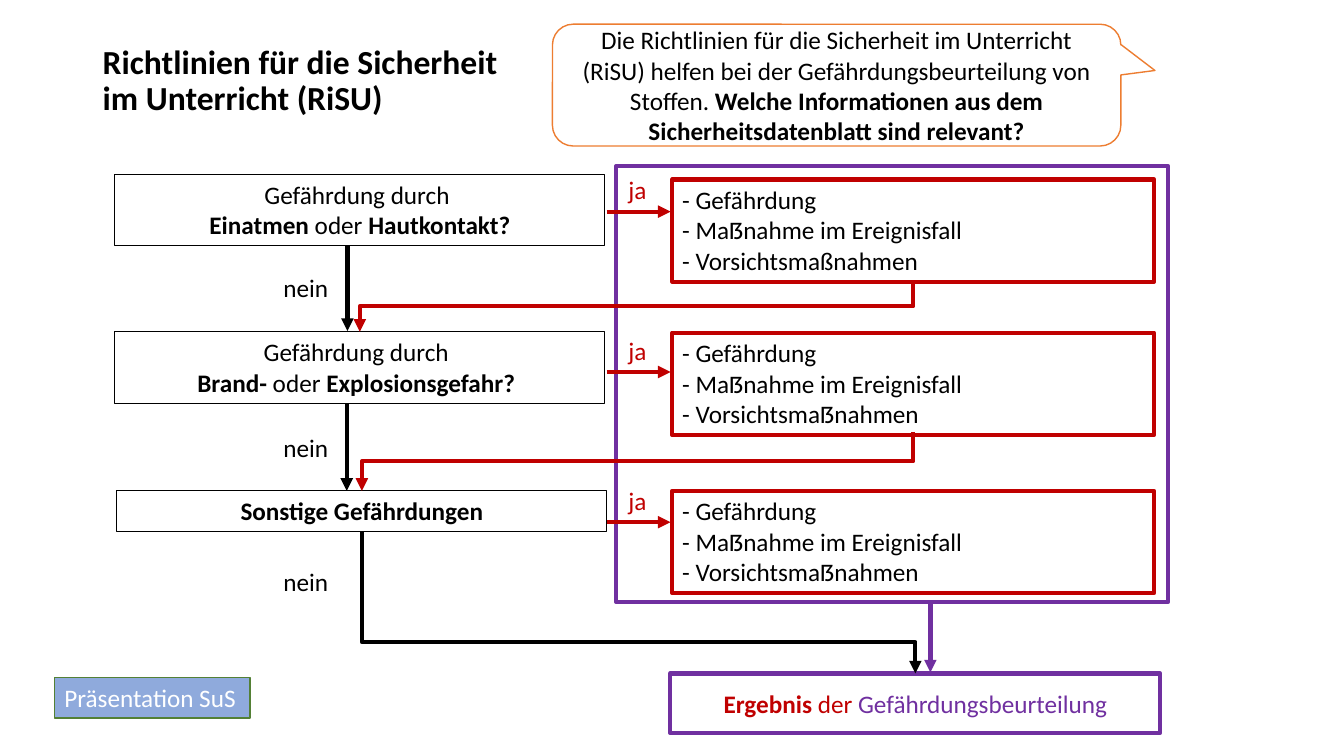
import pptx
import pptx.util
import pptx.dml.color
import pptx.enum.shapes
import pptx.enum.text
import lxml.etree
import pptx.oxml.ns

Pt = pptx.util.Pt
Kind = pptx.enum.shapes.MSO_SHAPE
Wire = pptx.enum.shapes.MSO_CONNECTOR
Anchor = pptx.enum.text.MSO_ANCHOR
Align = pptx.enum.text.PP_ALIGN
Fit = pptx.enum.text.MSO_AUTO_SIZE
qn = pptx.oxml.ns.qn

BLACK, RED, PURPLE, WHITE = "000000", "C00000", "7030A0", "FFFFFF"


def paint(target, color):
    """Give a fill, line fill or font a solid colour."""
    if hasattr(target, "solid"):
        target.solid()
        target = target.fore_color
    else:
        target = target.color
    target.rgb = pptx.dml.color.RGBColor.from_string(color)


def write(frame, paras, align=Align.LEFT, size=18):
    """Each paragraph is a list of (text, bold, colour); \v breaks a line."""
    for num, parts in enumerate(paras):
        para = frame.paragraphs[0] if num == 0 else frame.add_paragraph()
        para.alignment = align
        for text, bold, color in parts:
            for pos, bit in enumerate(text.split("\v")):
                if pos:
                    para.add_line_break()
                if bit:
                    run = para.add_run()
                    run.text = bit
                    run.font.name = "Calibri"
                    run.font.size = Pt(size)
                    run.font.bold = bold
                    paint(run.font, color)


def add_box(slide, place, line, width, paras=(), align=Align.CENTER,
            fill=None, kind=Kind.RECTANGLE, anchor=Anchor.TOP):
    box = slide.shapes.add_shape(kind, *map(Pt, place))
    box.shadow.inherit = False
    if fill:
        paint(box.fill, fill)
    else:
        box.fill.background()
    paint(box.line, line)
    box.line.width = Pt(width)
    frame = box.text_frame
    frame.word_wrap = True
    frame.vertical_anchor = anchor
    write(frame, paras, align)
    return box


def add_label(slide, left, top, text, color):
    label = slide.shapes.add_textbox(Pt(left), Pt(top), Pt(38), Pt(21.6))
    frame = label.text_frame
    frame.margin_left = frame.margin_right = 0
    frame.margin_top = frame.margin_bottom = 0
    frame.word_wrap = True
    frame.auto_size = Fit.SHAPE_TO_FIT_TEXT
    write(frame, [[(text, False, color)]], Align.CENTER)


def style(wire, color):
    """Thick line with a triangle at its end and no shadow."""
    paint(wire.line, color)
    wire.line.width = Pt(3)
    line = wire.line._get_or_add_ln()
    lxml.etree.SubElement(line, qn("a:tailEnd"), type="triangle")
    lxml.etree.SubElement(wire._element.spPr, qn("a:effectLst"))


def add_arrow(slide, x1, y1, x2, y2, color):
    wire = slide.shapes.add_connector(
        Wire.STRAIGHT, Pt(x1), Pt(y1), Pt(x2), Pt(y2))
    style(wire, color)


def add_bend(slide, x1, y1, x2, y2, color, turn=50000):
    """Elbow that leaves downwards: a sideways elbow turned on its centre."""
    mid_x, mid_y = (x1 + x2) / 2, (y1 + y2) / 2
    half_w, half_h = (y2 - y1) / 2, abs(x2 - x1) / 2
    wire = slide.shapes.add_connector(
        Wire.ELBOW, Pt(mid_x - half_w), Pt(mid_y - half_h),
        Pt(mid_x + half_w), Pt(mid_y + half_h))
    props = wire._element.spPr
    frame = props.find(qn("a:xfrm"))
    frame.set("rot", "5400000" if x2 < x1 else "16200000")
    if x2 > x1:
        frame.set("flipH", "1")
    guides = props.find(qn("a:prstGeom")).get_or_add_avLst()
    lxml.etree.SubElement(
        guides, qn("a:gd"), name="adj1", fmla=f"val {turn}")
    style(wire, color)


def add_title(slide):
    title = slide.shapes.title
    title.left, title.top = Pt(66.2), Pt(28.8)
    title.width, title.height = Pt(409), Pt(104.4)
    frame = title.text_frame
    frame.word_wrap = True
    frame.auto_size = Fit.NONE
    frame.vertical_anchor = Anchor.TOP
    write(frame, [[("Richtlinien für die Sicherheit", True, BLACK)],
                  [("im Unterricht (RiSU)", True, BLACK)]], size=24)
    for para in frame.paragraphs:
        para.line_spacing = 0.9
        para.space_before = Pt(0)


def main():
    deck = pptx.Presentation()
    deck.slide_width, deck.slide_height = Pt(960), Pt(540)
    slide = deck.slides.add_slide(deck.slide_layouts[5])
    add_title(slide)

    # Frame around the measures
    add_box(slide, (440, 118.8, 394.5, 311), PURPLE, 3)

    # Rows: question place, its text, tops of measures, arrow, ja and nein
    ask = ("Gefährdung durch \v", False, BLACK)
    either = (" oder ", False, BLACK)
    rows = [
        ((82.1, 124.7, 350, 51),
         [ask, ("Einatmen", True, BLACK), either,
          ("Hautkontakt?", True, BLACK)],
         128.2, 151.2, 124.6, 194.4, "- Vorsichtsmaßnahmen"),
        ((81.5, 237, 350, 51),
         [ask, ("Brand-", True, BLACK), either,
          ("Explosionsgefahr? ", True, BLACK)],
         237.6, 265.7, 239.8, 309, "- Vorsichtsmaẞnahmen"),
        ((83.5, 350.6, 350, 29),
         [("Sonstige Gefährdungen", True, BLACK)],
         350.6, 373, 347, 404.6, "- Vorsichtsmaẞnahmen"),
    ]
    for place, parts, top, level, yes, no, care in rows:
        add_box(slide, place, BLACK, 0.75, [parts])
        add_box(slide, (480.2, top, 344.2, 73), RED, 3,
                [[("- Gefährdung\v- Maẞnahme im Ereignisfall", False, BLACK)],
                 [(care, False, BLACK)]], Align.LEFT)
        add_arrow(slide, 433.4, level, 479, level, RED)
        add_label(slide, 436.3, yes, "ja", RED)
        add_label(slide, 199.4, no, "nein", BLACK)

    # Result
    add_box(slide, (478.8, 481, 350, 42.5), PURPLE, 3,
            [[("Ergebnis ", True, RED), ("der ", False, RED),
              ("Gefährdungsbeurteilung", False, PURPLE)]],
            anchor=Anchor.MIDDLE)

    # Ways down
    add_arrow(slide, 248.2, 175.7, 248.2, 236.5, BLACK)
    add_arrow(slide, 247.7, 288, 247.7, 350.6, BLACK)
    add_bend(slide, 652.3, 200.5, 257, 237, RED)
    add_bend(slide, 652.3, 308.4, 258.5, 350.6, RED)
    add_bend(slide, 258.5, 380, 653.8, 481, BLACK, 77800)
    add_arrow(slide, 664.6, 430, 664.6, 480.3, PURPLE)

    # Tag and speech bubble
    add_box(slide, (38.9, 483.8, 139.7, 29), "538035", 1,
            [[("Präsentation SuS", False, WHITE)]], Align.LEFT, "8FAADC")
    bubble = add_box(
        slide, (394.6, 17.3, 406, 87), "ED7D31", 1,
        [[("Die Richtlinien für die Sicherheit im Unterricht (RiSU) helfen "
           "bei der Gefährdungsbeurteilung von Stoffen. ", False, BLACK),
          ("Welche Informationen aus dem Sicherheitsdatenblatt sind "
           "relevant?", True, BLACK)]],
        fill=WHITE, kind=Kind.ROUNDED_RECTANGULAR_CALLOUT,
        anchor=Anchor.MIDDLE)
    for num, value in enumerate((0.56, -0.12, 0.17)):
        bubble.adjustments[num] = value

    deck.save("out.pptx")


if __name__ == "__main__":
    main()
